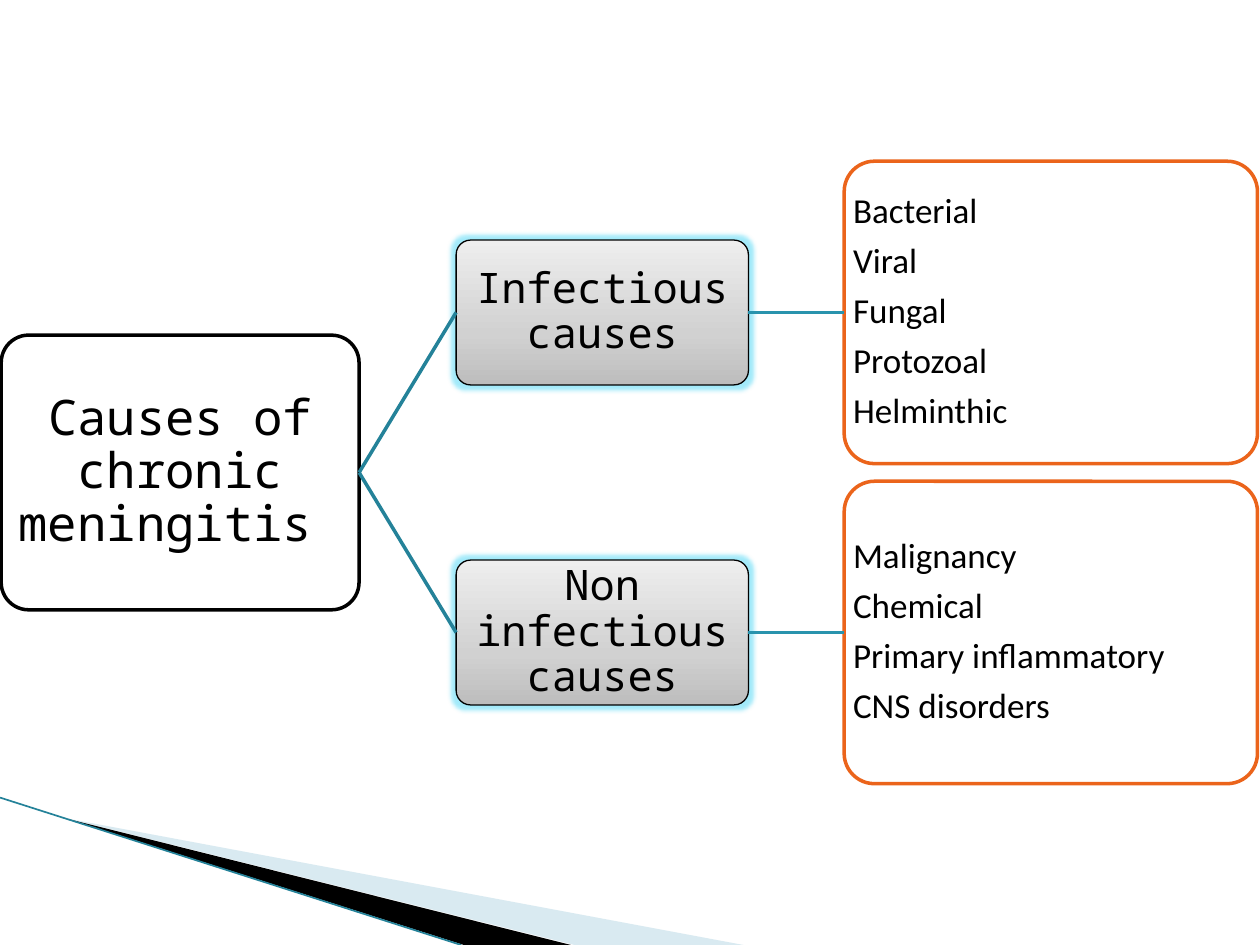
from copy import deepcopy
from dataclasses import dataclass

from lxml import etree
from pptx import Presentation
from pptx import util as u
from pptx.dml.color import RGBColor
from pptx.enum import shapes, text
from pptx.oxml import ns

WIDTH, HEIGHT = 10, 7.5
MIDDLE, ROW_OFFSET = HEIGHT / 2, 1.27
COLUMNS = {"root": (0.01, 2.84, 2.18), "branch": (3.62, 2.32, 1.15), "leaf": (6.7, 3.28, 2.4)}

ROOT = "Causes of chronic meningitis "
BRANCHES = [
    ("Infectious causes", ["Bacterial", "Viral", "Fungal", "Protozoal", "Helminthic"]),
    ("Non infectious causes", ["Malignancy", "Chemical", "Primary inflammatory", "CNS disorders"]),
]


@dataclass(frozen=True)
class Theme:
    paper: str = "FFFFFF"
    ink: str = "000000"
    accent: str = "EB641B"
    trunk: str = "248299"
    twig: str = "2993AD"
    wedge: str = "A0CBDC"
    glow: str = "45D5F5"
    greys: tuple = ((0, "BDBDBD"), (0.35, "D1D1D1"), (1, "EEEEEE"))
    label_font: str = "Noto Sans Mono"
    list_font: str = "Calibri"
    root_size: int = 28
    branch_size: int = 24
    leaf_size: int = 20


THEME = Theme()


def rgb(code):
    return RGBColor.from_string(code)


def sub(parent, tag, **attributes):
    return etree.SubElement(parent, ns.qn(tag), attributes)


def add_wedge(slide, corners, color, opacity=100):
    points = [(u.Inches(x), u.Inches(y)) for x, y in corners]
    builder = slide.shapes.build_freeform(*points[0])
    builder.add_line_segments(points[1:], close=True)
    wedge = builder.convert_to_shape()
    wedge.shadow.inherit = False
    wedge.fill.solid()
    wedge.fill.fore_color.rgb = rgb(color)
    wedge.line.fill.background()
    tint = wedge.fill._xPr.find(".//" + ns.qn("a:srgbClr"))
    sub(tint, "a:alpha", val=str(opacity * 1000))


def add_line(slide, color, width, start=(0, 0), end=(0, 0)):
    line = slide.shapes.add_connector(
        shapes.MSO_CONNECTOR.STRAIGHT, *[u.Inches(v) for v in (*start, *end)])
    line.line.color.rgb = rgb(color)
    line.line.width = u.Pt(width)
    sub(line._element.spPr, "a:effectLst")
    return line


def link(slide, parent, child, color):
    line = add_line(slide, color, 2)
    line.begin_connect(parent, 3)
    line.end_connect(child, 1)


def write(box, lines, font, size, align, inset):
    frame = box.text_frame
    frame.word_wrap = True
    frame.vertical_anchor = text.MSO_ANCHOR.MIDDLE
    frame.margin_left = frame.margin_right = u.Inches(inset)
    frame.margin_top = frame.margin_bottom = u.Inches(inset)
    for index, line in enumerate(lines):
        paragraph = frame.paragraphs[0] if index == 0 else frame.add_paragraph()
        paragraph.alignment = align
        paragraph.line_spacing = 0.9
        paragraph.space_after = u.Pt(0.35 * size)
        run = paragraph.add_run()
        run.text = line
        run.font.name = font
        run.font.size = u.Pt(size)
        run.font.color.rgb = rgb(THEME.ink)


def add_box(slide, column, center, outline, weight):
    left, width, height = COLUMNS[column]
    box = slide.shapes.add_shape(
        shapes.MSO_SHAPE.ROUNDED_RECTANGLE, u.Inches(left),
        u.Inches(center - height / 2), u.Inches(width), u.Inches(height))
    box.adjustments[0] = 0.1
    box.shadow.inherit = False
    box.fill.solid()
    box.fill.fore_color.rgb = rgb(THEME.paper)
    box.line.color.rgb = rgb(outline)
    box.line.width = u.Pt(weight)
    return box


def shade(box):
    box.fill.gradient()
    box.fill.gradient_angle = 90
    stop_list = box._element.spPr.find(".//" + ns.qn("a:gsLst"))
    stop_list.append(deepcopy(stop_list[-1]))
    for stop, (position, color) in zip(box.fill.gradient_stops, THEME.greys):
        stop.position = position
        stop.color.rgb = rgb(color)


def add_glow(box):
    effects = box._element.spPr.find(ns.qn("a:effectLst"))
    glow = sub(effects, "a:glow", rad=str(u.Pt(5)))
    sub(sub(glow, "a:srgbClr", val=THEME.glow), "a:alpha", val="50000")


def add_branch(slide, root, center, label, causes):
    branch = add_box(slide, "branch", center, THEME.ink, 0.75)
    shade(branch)
    add_glow(branch)
    write(branch, [label], THEME.label_font, THEME.branch_size, text.PP_ALIGN.CENTER, 0.02)
    leaf = add_box(slide, "leaf", center, THEME.accent, 2)
    write(leaf, causes, THEME.list_font, THEME.leaf_size, text.PP_ALIGN.LEFT, 0)
    link(slide, root, branch, THEME.trunk)
    link(slide, branch, leaf, THEME.twig)


def add_corner(slide):
    add_wedge(slide, [(0.55, 6.5), (5.9, HEIGHT), (4.56, HEIGHT)], THEME.wedge, 40)
    add_wedge(slide, [(0.54, 6.5), (4.53, HEIGHT), (3.68, HEIGHT)], THEME.ink)
    add_line(slide, THEME.trunk, 0.95, (0, 6.33), (3.66, HEIGHT))


def main():
    deck = Presentation()
    deck.slide_width, deck.slide_height = u.Inches(WIDTH), u.Inches(HEIGHT)
    slide = deck.slides.add_slide(deck.slide_layouts[6])
    add_corner(slide)
    root = add_box(slide, "root", MIDDLE, THEME.ink, 2)
    write(root, [ROOT], THEME.label_font, THEME.root_size, text.PP_ALIGN.CENTER, 0.02)
    for side, (label, causes) in zip((-1, 1), BRANCHES):
        add_branch(slide, root, MIDDLE + side * ROW_OFFSET, label, causes)
    deck.save("out.pptx")


if __name__ == "__main__":
    main()
